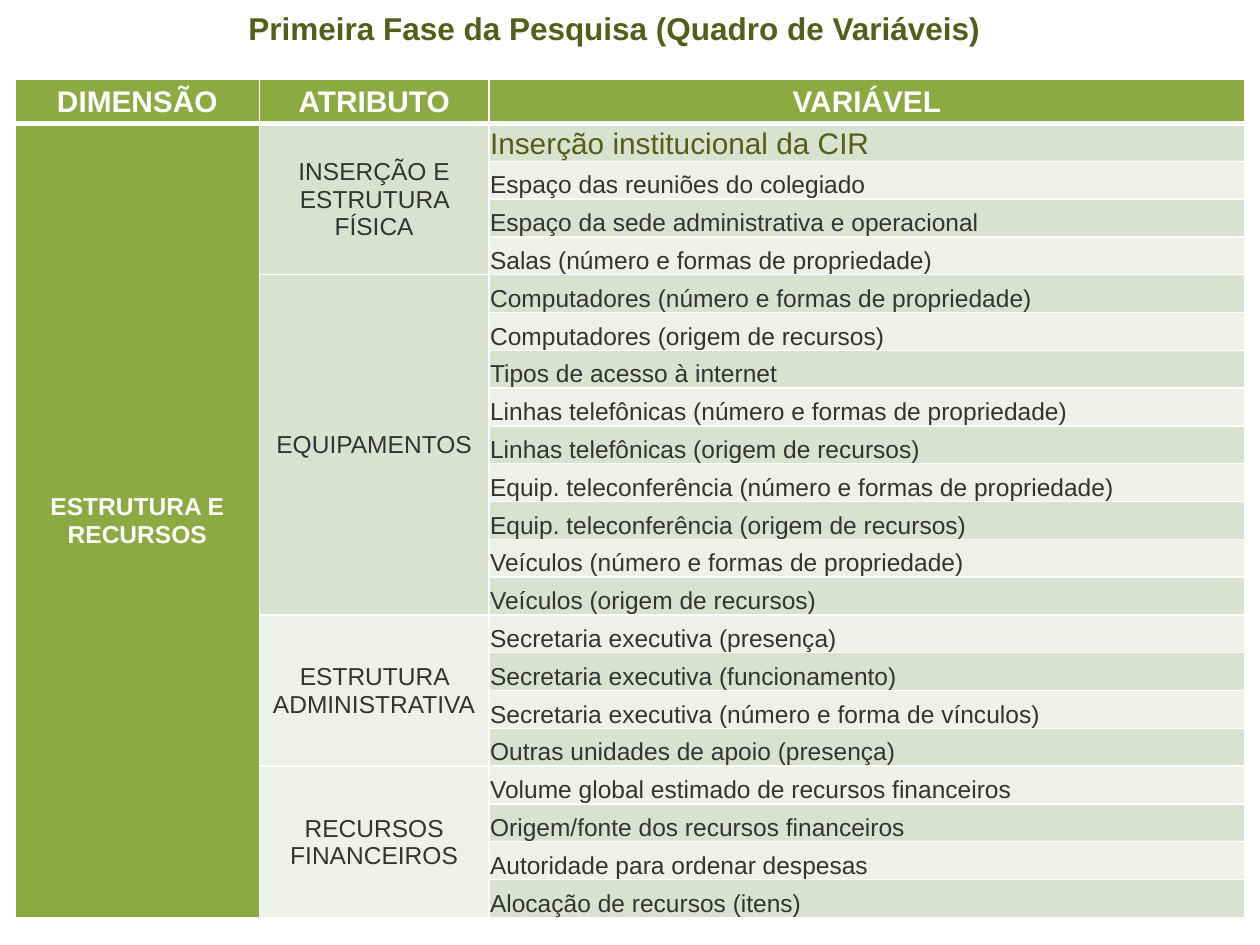
import lxml.etree
import pptx
import pptx.dml.color
import pptx.enum.text
import pptx.oxml.ns
import pptx.util

Inches = pptx.util.Inches
Align = pptx.enum.text.PP_ALIGN
Anchor = pptx.enum.text.MSO_ANCHOR

COLORS = {
    "olive": "545E19",
    "green": "8BAB42",
    "dark_band": "DAE2CF",
    "light_band": "EEF1E9",
    "text": "333333",
    "white": "FFFFFF",
}
HEADERS = ["DIMENSÃO", "ATRIBUTO", "VARIÁVEL"]
DIMENSION = "ESTRUTURA E RECURSOS"
ATTRIBUTES = [
    ("INSERÇÃO E ESTRUTURA FÍSICA", [
        "Inserção institucional da CIR",
        "Espaço das reuniões do colegiado",
        "Espaço da sede administrativa e operacional",
        "Salas (número e formas de propriedade)",
    ]),
    ("EQUIPAMENTOS", [
        "Computadores (número e formas de propriedade)",
        "Computadores (origem de recursos)",
        "Tipos de acesso à internet",
        "Linhas telefônicas (número e formas de propriedade)",
        "Linhas telefônicas (origem de recursos)",
        "Equip. teleconferência (número e formas de propriedade)",
        "Equip. teleconferência (origem de recursos)",
        "Veículos (número e formas de propriedade)",
        "Veículos (origem de recursos)",
    ]),
    ("ESTRUTURA ADMINISTRATIVA", [
        "Secretaria executiva (presença)",
        "Secretaria executiva (funcionamento)",
        "Secretaria executiva (número e forma de vínculos)",
        "Outras unidades de apoio (presença)",
    ]),
    ("RECURSOS FINANCEIROS", [
        "Volume global estimado de recursos financeiros",
        "Origem/fonte dos recursos financeiros",
        "Autoridade para ordenar despesas",
        "Alocação de recursos (itens)",
    ]),
]


class SlideBuilder:
    font = "Arial"

    def __init__(self, presentation):
        self.slide = presentation.slides.add_slide(presentation.slide_layouts[6])

    def set_text(self, text_frame, text, size, color, bold=False, align=Align.CENTER):
        text_frame.text = text
        text_frame.word_wrap = True
        paragraph = text_frame.paragraphs[0]
        paragraph.alignment = align
        for run in paragraph.runs:
            run.font.name = self.font
            run.font.size = pptx.util.Pt(size)
            run.font.bold = bold
            run.font.color.rgb = pptx.dml.color.RGBColor.from_string(COLORS[color])

    def title(self, text, left, top, width, height):
        box = self.slide.shapes.add_textbox(
            Inches(left), Inches(top), Inches(width), Inches(height))
        self.set_text(box.text_frame, text, 18, "olive", bold=True)

    def table(self, left, top, widths, heights):
        frame = self.slide.shapes.add_table(
            len(heights), len(widths), Inches(left), Inches(top),
            Inches(sum(widths)), Inches(sum(heights)))
        table = frame.table
        for column, width in zip(table.columns, widths):
            column.width = Inches(width)
        for row, height in zip(table.rows, heights):
            row.height = Inches(height)
        for index, row in enumerate(table.rows):
            for cell in row.cells:
                cell.margin_left = cell.margin_right = cell.margin_top = Inches(0.01)
                cell.margin_bottom = 0
                self.borders(cell, 3 if index == 1 else 1, 3 if index == 0 else 1)
        return table

    def borders(self, cell, top, bottom):
        properties = cell._tc.get_or_add_tcPr()
        qn = pptx.oxml.ns.qn
        for side, width in (("L", 1), ("R", 1), ("T", top), ("B", bottom)):
            line = lxml.etree.SubElement(
                properties, qn(f"a:ln{side}"), w=str(pptx.util.Pt(width)))
            fill = lxml.etree.SubElement(line, qn("a:solidFill"))
            lxml.etree.SubElement(fill, qn("a:srgbClr"), val=COLORS["white"])

    def cell(self, cell, text, fill, size=14, color="text", bold=False,
             align=Align.CENTER, anchor=Anchor.MIDDLE):
        self.set_text(cell.text_frame, text, size, color, bold, align)
        cell.vertical_anchor = anchor
        cell.fill.solid()
        cell.fill.fore_color.rgb = pptx.dml.color.RGBColor.from_string(COLORS[fill])


def main():
    presentation = pptx.Presentation()
    presentation.slide_width = Inches(10)
    presentation.slide_height = Inches(7.5)
    builder = SlideBuilder(presentation)
    builder.title("Primeira Fase da Pesquisa (Quadro de Variáveis)", 0.42, 0.02, 8.91, 0.4)

    row_count = sum(len(variables) for _, variables in ATTRIBUTES)
    table = builder.table(0.12, 0.63, [1.94, 1.82, 6], [0.35] + [0.3] * row_count)
    for column, header in enumerate(HEADERS):
        builder.cell(table.cell(0, column), header, "green", 17, "white", bold=True)

    table.cell(1, 0).merge(table.cell(row_count, 0))
    builder.cell(table.cell(1, 0), DIMENSION, "green", color="white", bold=True)
    row = 1
    for attribute, variables in ATTRIBUTES:
        table.cell(row, 1).merge(table.cell(row + len(variables) - 1, 1))
        builder.cell(table.cell(row, 1), attribute, "dark_band" if row % 2 else "light_band")
        for variable in variables:
            size, color = (17, "olive") if row == 1 else (14, "text")
            builder.cell(table.cell(row, 2), variable, "dark_band" if row % 2 else "light_band",
                         size, color, align=Align.LEFT, anchor=Anchor.BOTTOM)
            row += 1

    presentation.save("out.pptx")


if __name__ == "__main__":
    main()
